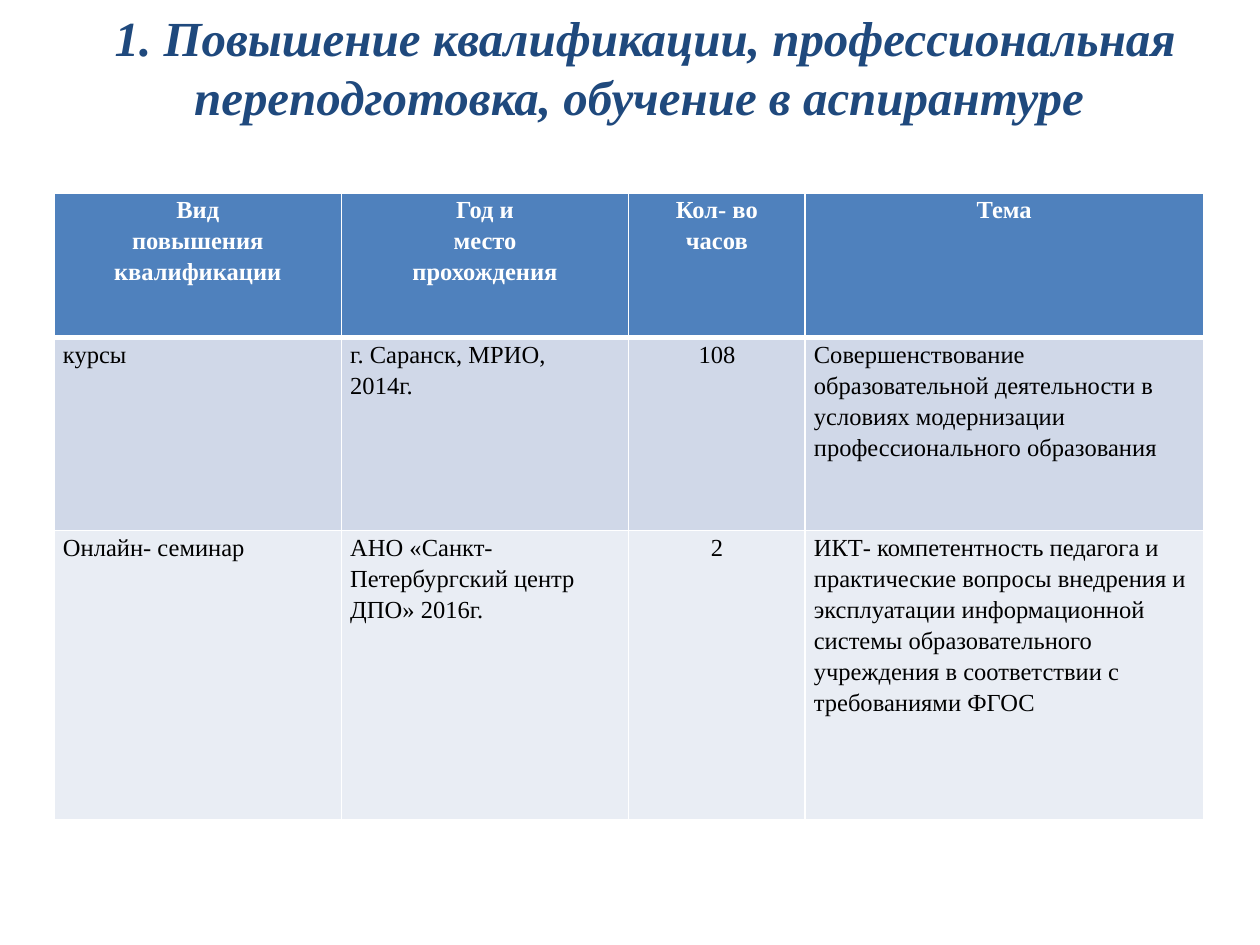
import pptx
import pptx.util
import pptx.dml.color
import pptx.enum.text
from dataclasses import dataclass
from lxml import etree

Inches = pptx.util.Inches
Pt = pptx.util.Pt
RGB = pptx.dml.color.RGBColor.from_string
ALIGN = pptx.enum.text.PP_ALIGN
ANCHOR = pptx.enum.text.MSO_ANCHOR
AUTO_SIZE = pptx.enum.text.MSO_AUTO_SIZE


@dataclass(frozen=True)
class Theme:
    font: str = "Times New Roman"
    title_size: int = 28
    table_size: int = 14
    title: str = "1F497D"
    header: str = "4F81BD"
    bands: tuple = ("D0D8E8", "E9EDF4")
    light: str = "FFFFFF"
    dark: str = "000000"


class Deck:
    def __init__(self, theme):
        self.theme = theme
        self.prs = pptx.Presentation()
        self.prs.slide_width = Inches(10)
        self.prs.slide_height = Inches(7.5)
        self.s = self.prs.slides.add_slide(self.prs.slide_layouts[5])

    def style(self, p, size, color, bold=False, italic=False):
        p.font.name = self.theme.font
        p.font.size = Pt(size)
        p.font.color.rgb = RGB(color)
        p.font.bold = bold
        p.font.italic = italic

    def title(self, text, x, y, w, h):
        sp = self.s.shapes.title
        sp.left, sp.top, sp.width, sp.height = map(Inches, (x, y, w, h))
        tf = sp.text_frame
        tf.text = text
        tf.word_wrap = True
        tf.auto_size = AUTO_SIZE.NONE
        tf.vertical_anchor = ANCHOR.MIDDLE
        p = tf.paragraphs[0]
        p.alignment = ALIGN.CENTER
        self.style(p, self.theme.title_size, self.theme.title, True, True)

    def borders(self, cell, bottom):
        tcPr = cell._tc.get_or_add_tcPr()
        widths = {"lnL": 1, "lnR": 1, "lnT": 1, "lnB": bottom}
        for i, (tag, width) in enumerate(widths.items()):
            ln = etree.Element(pptx.oxml.ns.qn("a:" + tag), w=str(Pt(width)))
            fill = etree.SubElement(ln, pptx.oxml.ns.qn("a:solidFill"))
            etree.SubElement(fill, pptx.oxml.ns.qn("a:srgbClr"), val=self.theme.light)
            tcPr.insert(i, ln)

    def cell(self, cell, text, fill, color, header, centred):
        cell.fill.solid()
        cell.fill.fore_color.rgb = RGB(fill)
        cell.margin_left = cell.margin_right = Inches(0.07)
        cell.margin_top = cell.margin_bottom = 0
        cell.vertical_anchor = ANCHOR.TOP
        cell.text_frame.text = text
        for p in cell.text_frame.paragraphs:
            p.alignment = ALIGN.CENTER if centred else ALIGN.LEFT
            p.line_spacing = 1.15
            self.style(p, self.theme.table_size, color, header)

    def table(self, rows, x, y, widths, heights, centred_cols):
        frame = self.s.shapes.add_table(
            len(rows), len(widths), Inches(x), Inches(y),
            Inches(sum(widths)), Inches(sum(heights)))
        table = frame.table
        for col, width in zip(table.columns, widths):
            col.width = Inches(width)
        for row, height in zip(table.rows, heights):
            row.height = Inches(height)
        bands = self.theme.bands
        for r, texts in enumerate(rows):
            header = r == 0
            fill = self.theme.header if header else bands[(r - 1) % len(bands)]
            color = self.theme.light if header else self.theme.dark
            for c, text in enumerate(texts):
                cell = table.cell(r, c)
                self.cell(cell, text, fill, color, header, header or c in centred_cols)
                self.borders(cell, 3 if header else 1)
                if r == 1:
                    top = cell._tc.tcPr.find(pptx.oxml.ns.qn("a:lnT"))
                    top.set("w", str(Pt(3)))


ROWS = [
    ("Вид\nповышения\nквалификации", "Год и\nместо\nпрохождения", "Кол- во\nчасов", "Тема"),
    ("курсы", "г. Саранск, МРИО,\v2014г.", "108",
     "Совершенствование образовательной деятельности в условиях модернизации "
     "профессионального образования"),
    ("Онлайн- семинар", "АНО «Санкт-Петербургский центр ДПО» 2016г.", "2",
     "ИКТ- компетентность педагога и практические вопросы внедрения и эксплуатации "
     "информационной системы образовательного учреждения в соответствии с "
     "требованиями ФГОС"),
]


def main():
    deck = Deck(Theme())
    deck.title("1. Повышение квалификации, профессиональная переподготовка, "
               "обучение в аспирантуре ", 0.62, 0, 9, 1.05)
    deck.table(ROWS, 0.43, 1.53, (2.28, 2.28, 1.4, 3.16), (1.15, 1.53, 2.3), {2})
    deck.prs.save("out.pptx")


if __name__ == "__main__":
    main()
